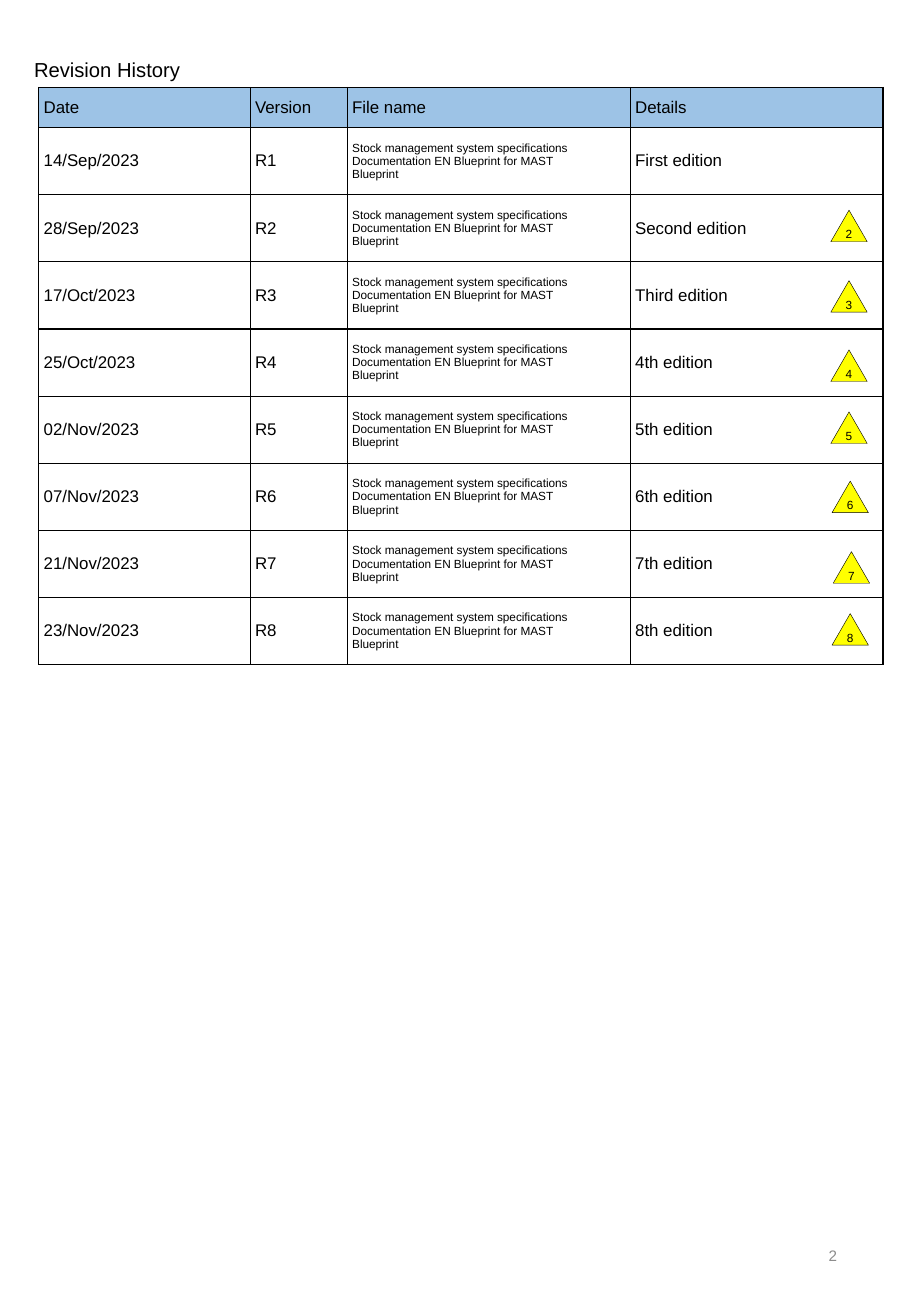
from lxml.etree import SubElement
from pptx import Presentation
from pptx.dml.color import RGBColor
from pptx.enum.shapes import MSO_SHAPE
from pptx.enum.text import MSO_ANCHOR, MSO_AUTO_SIZE, PP_ALIGN
from pptx.oxml.ns import qn
from pptx.util import Inches, Pt

COLORS = {"text": "000000", "header": "9DC3E6", "marker": "FFFF00", "number": "8C8C8C"}
FONT = "Arial"

HEADINGS = ["Date", "Version", "File name", "Details"]
FILE_NAME = [
    "Stock management system specifications",
    "Documentation EN Blueprint for MAST",
    "Blueprint",
]
REVISIONS = [
    ("14/Sep/2023", "First edition"),
    ("28/Sep/2023", "Second edition"),
    ("17/Oct/2023", "Third edition"),
    ("25/Oct/2023", "4th edition"),
    ("02/Nov/2023", "5th edition"),
    ("07/Nov/2023", "6th edition"),
    ("21/Nov/2023", "7th edition"),
    ("23/Nov/2023", "8th edition"),
]
COLUMN_WIDTHS = [1.74, 0.8, 2.33, 2.08]
TABLE_HEIGHT = 4.75
HEADER_HEIGHT = 0.33
MARKER_SPOTS = [
    (6.84, 1.73), (6.84, 2.31), (6.84, 2.88), (6.84, 3.39),
    (6.85, 3.96), (6.86, 4.54), (6.85, 5.05),
]


def color(name):
    return RGBColor.from_string(COLORS[name])


def write(frame, lines, size, color_name="text", align=PP_ALIGN.LEFT):
    """Fill a text frame with one paragraph per line."""
    frame.vertical_anchor = MSO_ANCHOR.MIDDLE
    for index, line in enumerate(lines):
        para = frame.paragraphs[0] if index == 0 else frame.add_paragraph()
        para.alignment = align
        span = para.add_run()
        span.text = line
        span.font.name = FONT
        span.font.size = Pt(size)
        span.font.color.rgb = color(color_name)


def add_title(page, text):
    title = page.shapes.title
    title.left, title.top = Inches(0.12), Inches(0.42)
    title.width, title.height = Inches(1.8), Inches(0.3)
    frame = title.text_frame
    frame.auto_size = MSO_AUTO_SIZE.NONE
    frame.word_wrap = False
    frame.margin_left = Inches(0.16)
    write(frame, [text], 12)


def add_borders(cell):
    properties = cell._tc.get_or_add_tcPr()
    for side in ("lnL", "lnR", "lnT", "lnB"):
        line = SubElement(properties, qn(f"a:{side}"), w=str(Pt(0.75)))
        fill = SubElement(line, qn("a:solidFill"))
        SubElement(fill, qn("a:srgbClr"), val=COLORS["text"])


def fill_cell(cell, lines, size, fill_name=None):
    add_borders(cell)
    if fill_name:
        cell.fill.solid()
        cell.fill.fore_color.rgb = color(fill_name)
    else:
        cell.fill.background()
    cell.margin_left = Inches(0.04)
    cell.vertical_anchor = MSO_ANCHOR.MIDDLE
    write(cell.text_frame, lines, size)


def add_revision_table(page):
    table = page.shapes.add_table(
        len(REVISIONS) + 1, len(HEADINGS), Inches(0.32), Inches(0.72),
        Inches(sum(COLUMN_WIDTHS)), Inches(TABLE_HEIGHT),
    ).table
    table.first_row = table.horz_banding = False
    for column, width in zip(table.columns, COLUMN_WIDTHS):
        column.width = Inches(width)
    for row in table.rows:
        row.height = Inches((TABLE_HEIGHT - HEADER_HEIGHT) / len(REVISIONS))
    table.rows[0].height = Inches(HEADER_HEIGHT)

    for column, heading in enumerate(HEADINGS):
        fill_cell(table.cell(0, column), [heading], 10, "header")
    for number, (date, details) in enumerate(REVISIONS, start=1):
        fill_cell(table.cell(number, 0), [date], 10)
        fill_cell(table.cell(number, 1), [f"R{number}"], 10)
        fill_cell(table.cell(number, 2), FILE_NAME, 7)
        fill_cell(table.cell(number, 3), [details], 10)


def add_marker(page, number, left, top):
    """Draw the numbered triangle of one revision."""
    marker = page.shapes.add_shape(
        MSO_SHAPE.ISOSCELES_TRIANGLE,
        Inches(left), Inches(top), Inches(0.3), Inches(0.26),
    )
    marker.shadow.inherit = False
    marker.fill.solid()
    marker.fill.fore_color.rgb = color("marker")
    marker.line.color.rgb = color("text")
    marker.line.width = Pt(0.25)
    frame = marker.text_frame
    frame.word_wrap = False
    frame.margin_left = frame.margin_right = 0
    frame.margin_top = frame.margin_bottom = 0
    write(frame, [str(number)], 7, align=PP_ALIGN.CENTER)


def add_page_number(page, number):
    box = page.shapes.add_textbox(Inches(5.3), Inches(10.04), Inches(1.69), Inches(0.58))
    box.text_frame.word_wrap = True
    write(box.text_frame, [str(number)], 9, "number", PP_ALIGN.RIGHT)


def main():
    deck = Presentation()
    deck.slide_width, deck.slide_height = Inches(7.5), Inches(10.83)
    page = deck.slides.add_slide(deck.slide_layouts[5])
    add_title(page, "Revision History")
    add_revision_table(page)
    add_page_number(page, 2)
    for number, (left, top) in enumerate(MARKER_SPOTS, start=2):
        add_marker(page, number, left, top)
    deck.save("out.pptx")


if __name__ == "__main__":
    main()
